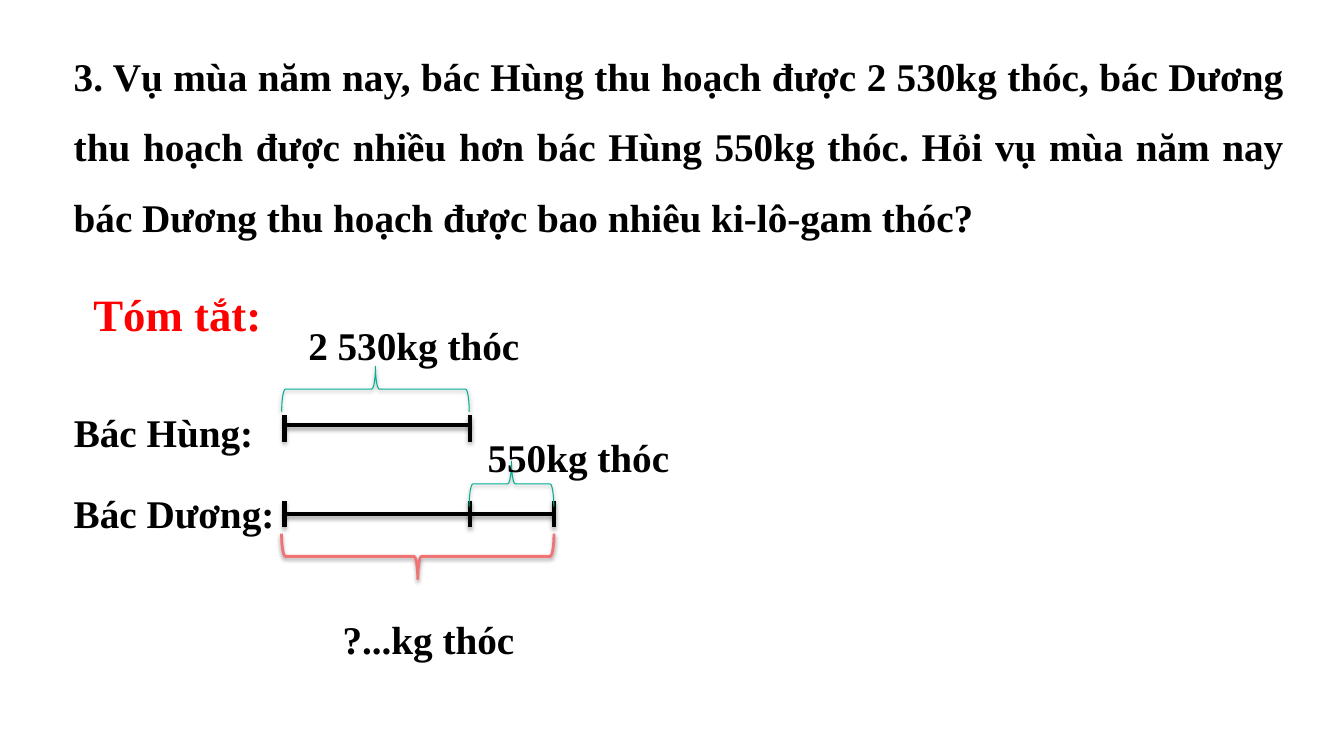
import pptx
import pptx.dml.color
import pptx.enum.shapes
import pptx.enum.text
import pptx.oxml
import pptx.util
from pptx.util import Pt

BLACK = pptx.dml.color.RGBColor(0, 0, 0)
RED = pptx.dml.color.RGBColor(255, 0, 0)
GREEN = pptx.dml.color.RGBColor(0x00, 0xAF, 0x92)
PINK = pptx.dml.color.RGBColor(0xF1, 0x74, 0x75)

deck = pptx.Presentation()
deck.slide_width, deck.slide_height = Pt(960), Pt(540)
slide = deck.slides.add_slide(deck.slide_layouts[6])


def write(text, left, top, width, height=52, size=28, color=BLACK):
    box = slide.shapes.add_textbox(Pt(left), Pt(top), Pt(width), Pt(height))
    frame = box.text_frame
    frame.word_wrap = True
    frame.auto_size = pptx.enum.text.MSO_AUTO_SIZE.SHAPE_TO_FIT_TEXT
    para = frame.paragraphs[0]
    para.alignment = pptx.enum.text.PP_ALIGN.JUSTIFY
    para.line_spacing = 1.5
    run = para.add_run()
    run.text = text
    font = run.font
    font.name, font.size, font.bold = "Times New Roman", Pt(size), True
    font.color.rgb = color


def stroke(shape, color, width, dist, alpha):
    """Set the line and a soft shadow straight below it."""
    shape.line.color.rgb = color
    shape.line.width = Pt(width)
    shape._element.spPr.append(pptx.oxml.parse_xml(
        '<a:effectLst xmlns:a="http://schemas.openxmlformats.org/drawingml/2006/main">'
        f'<a:outerShdw blurRad="{Pt(3.1)}" dist="{Pt(dist)}" dir="5400000" rotWithShape="0">'
        f'<a:srgbClr val="000000"><a:alpha val="{alpha * 1000}"/></a:srgbClr>'
        '</a:outerShdw></a:effectLst>'))


# Problem and heading
write("3. Vụ mùa năm nay, bác Hùng thu hoạch được 2 530kg thóc, bác Dương "
      "thu hoạch được nhiều hơn bác Hùng 550kg thóc. Hỏi vụ mùa năm nay "
      "bác Dương thu hoạch được bao nhiêu ki-lô-gam thóc?",
      45.6, 16.8, 878.4, 160)
write("Tóm tắt:", 59.6, 182.2, 150, 58, size=32, color=RED)

# Row names
write("Bác Hùng:", 45.6, 271.4, 146)
write("Bác Dương:", 45.6, 329.2, 484)

# Bars: height of bar, middle of its ticks, tick places
START, SPLIT, END = 203.2, 335.6, 396
for bar, mid, ticks in ((303.8, 306, (START, SPLIT)),
                        (367.2, 367.2, (START, SPLIT, END))):
    ends = [(x, bar, y, bar) for x, y in zip(ticks, ticks[1:])]
    ends += [(x, mid + 9.4, x, mid - 9.4) for x in ticks]
    for spot in ends:
        line = slide.shapes.add_connector(
            pptx.enum.shapes.MSO_CONNECTOR.STRAIGHT, *map(Pt, spot))
        stroke(line, BLACK, 3, 1.8, 35)

# Braces: a right brace turned about its centre
DEPTH = 32.4
for x, y, span, turn, color, width in (
        (268.2, 277.9, 134, 270, GREEN, 0.75),
        (365.4, 345.6, 60.5, 270, GREEN, 0.75),
        (298.4, 397.4, 194.6, 90, PINK, 2)):
    brace = slide.shapes.add_shape(
        pptx.enum.shapes.MSO_SHAPE.RIGHT_BRACE,
        Pt(x - DEPTH / 2), Pt(y - span / 2), Pt(DEPTH), Pt(span))
    brace.rotation = turn
    brace.fill.background()
    stroke(brace, color, width, 1.6, 38)

# Amounts
write("2 530kg thóc", 213.2, 209.5, 183)
write("550kg thóc", 341.2, 289.4, 165)
write("?...kg thóc", 237.6, 419, 144)

deck.save("out.pptx")
